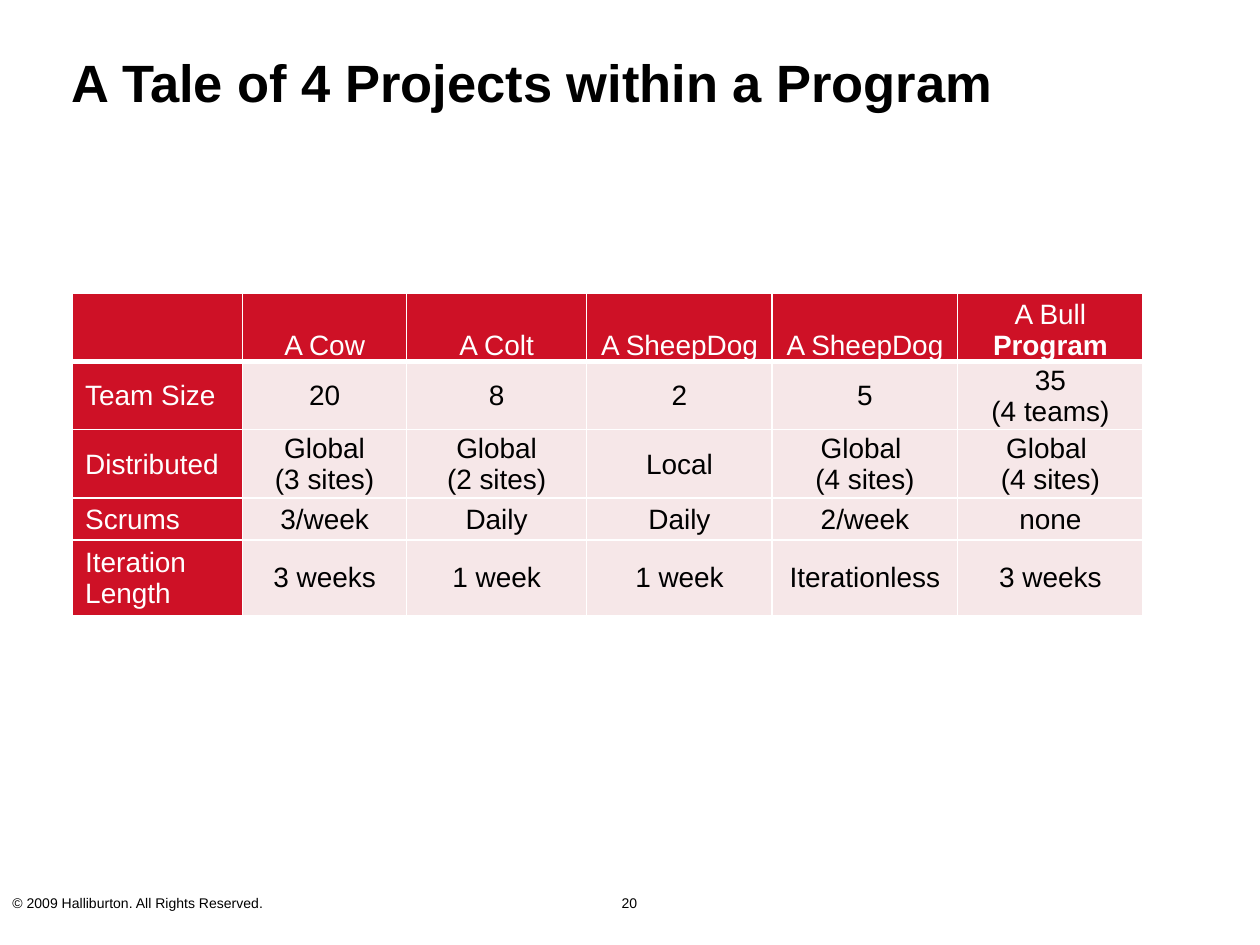
from lxml import etree
from pptx import Presentation
from pptx.dml.color import RGBColor
from pptx.enum.text import MSO_ANCHOR, PP_ALIGN
from pptx.oxml.ns import qn
from pptx.util import Pt

TOP, MID, LOW = MSO_ANCHOR.TOP, MSO_ANCHOR.MIDDLE, MSO_ANCHOR.BOTTOM
LEFT, CENTER = PP_ALIGN.LEFT, PP_ALIGN.CENTER

THEME = {
    "font": "Arial", "ink": "000000", "white": "FFFFFF",
    "red": "CE1126", "pale": "F6E7E8",
    "title": 30, "body": 16, "foot": 8,
}
LABELS = [
    ("A Tale of 4 Projects within a Program", (33.84, 12.96, 650.16, 67.68), "title", MID, LEFT),
    ("© 2009 Halliburton. All Rights Reserved.", (0, 507.6, 228.24, 18.72), "foot", TOP, LEFT),
    ("20", (275.76, 507.6, 167.76, 21.6), "foot", TOP, CENTER),
]
ROWS = [
    ["", "A Cow", "A Colt", "A SheepDog", "A SheepDog", "A Bull\nProgram"],
    ["Team Size", "20", "8", "2", "5", "35\n(4 teams)"],
    ["Distributed", "Global\n(3 sites)", "Global\n(2 sites)", "Local",
     "Global \n(4 sites)", "Global \n(4 sites)"],
    ["Scrums", "3/week", "Daily", "Daily", "2/week", "none"],
    ["Iteration Length", "3 weeks", "1 week", "1 week", "Iterationless", "3 weeks"],
]
WIDTHS = [97.2, 93.6, 103, 106, 106, 106]
HEIGHTS = [36, 39, 36, 24, 43]
SPOT = (41.5, 167.3)


def color(name):
    return RGBColor.from_string(THEME[name])


def style(frame, size, ink, align, bold):
    for para in frame.paragraphs:
        para.alignment = align
        font = para.font
        font.name, font.size = THEME["font"], Pt(THEME[size])
        font.bold = bold or para.text == "Program"
        font.color.rgb = color(ink)


def add_label(slide, text, box, size, anchor, align):
    frame = slide.shapes.add_textbox(*map(Pt, box)).text_frame
    frame.word_wrap = True
    frame.vertical_anchor = anchor
    frame.text = text
    style(frame, size, "ink", align, size == "title")


def add_edge(cell, side, width):
    props = cell._tc.get_or_add_tcPr()
    line = etree.SubElement(props, qn(f"a:ln{side}"), w=str(Pt(width)))
    fill = etree.SubElement(line, qn("a:solidFill"))
    etree.SubElement(fill, qn("a:srgbClr"), val=THEME["white"])


def fill_cell(cell, text, head, side):
    for edge in "LRTB" if head else "LRB":
        add_edge(cell, edge, 3 if head and edge == "B" else 1)
    cell.fill.solid()
    cell.fill.fore_color.rgb = color("red" if head or side else "pale")
    cell.margin_left = Pt(7.2 if side else 0.72)
    cell.margin_right = cell.margin_top = Pt(0.72)
    cell.margin_bottom = Pt(0)
    cell.vertical_anchor = LOW if head else MID
    cell.text_frame.text = text
    ink = "white" if head or side else "ink"
    style(cell.text_frame, "body", ink, LEFT if side else CENTER, False)


def add_grid(slide):
    size = sum(WIDTHS), sum(HEIGHTS)
    shape = slide.shapes.add_table(len(ROWS), len(WIDTHS), *map(Pt, SPOT + size))
    table = shape.table
    for col, width in zip(table.columns, WIDTHS):
        col.width = Pt(width)
    for r, (row, height) in enumerate(zip(ROWS, HEIGHTS)):
        table.rows[r].height = Pt(height)
        for c, text in enumerate(row):
            fill_cell(table.cell(r, c), text, r == 0, c == 0)


def main():
    """Build the slide that compares four projects in a program."""
    deck = Presentation()
    deck.slide_width, deck.slide_height = Pt(720), Pt(540)
    slide = deck.slides.add_slide(deck.slide_layouts[6])
    for label in LABELS:
        add_label(slide, *label)
    add_grid(slide)
    deck.save("out.pptx")


if __name__ == "__main__":
    main()
